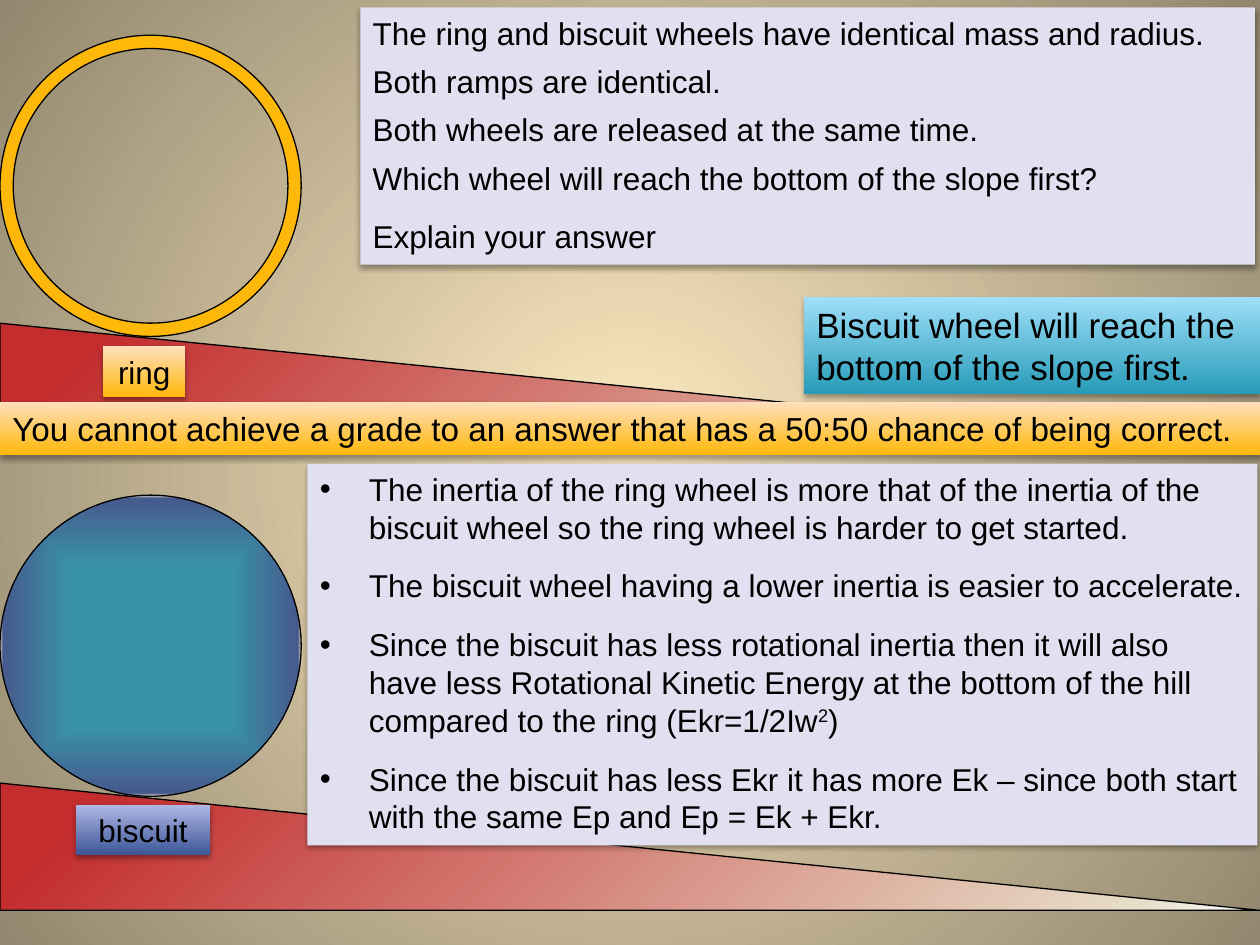
from lxml.etree import SubElement
from pptx import Presentation
from pptx.dml.color import RGBColor
from pptx.enum.shapes import MSO_SHAPE
from pptx.enum.text import MSO_ANCHOR, MSO_AUTO_SIZE, PP_ALIGN
from pptx.oxml.ns import qn
from pptx.util import Inches, Pt

# Grid: 100 columns by 75 rows of square cells
COLUMNS, ROWS = 100, 75
CELL = Inches(0.1)
WHEEL_SIZE = 23.9
RAMP_ROWS = 10.1
RAMP_DROP = 22.85  # from the top of a wheel to the top of its ramp
BULLET_INDENT = Inches(0.39)

BLACK = RGBColor(0x00, 0x00, 0x00)
WHITE = RGBColor(0xFF, 0xFF, 0xFF)
CREAM = RGBColor(0xFF, 0xEC, 0xC2)
OLIVE = RGBColor(0x92, 0x87, 0x6E)
AMBER = RGBColor(0xFE, 0xB8, 0x0A)
RED = RGBColor(0xC3, 0x2D, 0x2E)
SAND = RGBColor(0xE7, 0xDE, 0xC9)
TEAL = RGBColor(0x38, 0x91, 0xA7)
INDIGO = RGBColor(0x47, 0x5A, 0x8D)
LAVENDER = RGBColor(0xE0, 0xE0, 0xF0)

# Gradients as (position in percent, colour) stops
BACKDROP = [(0, CREAM), (100, OLIVE)]
RAMP = [(8, RED), (91, SAND), (100, WHITE)]
BISCUIT = [(54, TEAL), (98, INDIGO), (100, SAND)]
ORANGE_SHEEN = [(0, RGBColor(0xFF, 0xB8, 0x09)), (100, RGBColor(0xFF, 0xDF, 0xBC))]
BLUE_SHEEN = [(0, RGBColor(0x27, 0x9B, 0xB8)), (100, RGBColor(0x9F, 0xDF, 0xF9))]
INDIGO_SHEEN = [(0, RGBColor(0x3C, 0x55, 0x98)), (100, RGBColor(0xAE, 0xB8, 0xE4))]

# Paragraphs as (text, points after)
QUESTION = [
    ("The ring and biscuit wheels have identical mass and radius.", 6),
    ("Both ramps are identical.", 6),
    ("Both wheels are released at the same time.", 6),
    ("Which wheel will reach the bottom of the slope first?", 12),
    ("Explain your answer", 6),
]
# Reasons as lists of runs; the second run of a list is superscript
REASONS = [
    ["The inertia of the ring wheel is more that of the inertia of the "
     "biscuit wheel so the ring wheel is harder to get started."],
    ["The biscuit wheel having a lower inertia is easier to accelerate."],
    ["Since the biscuit has less rotational inertia then it will also have less "
     "Rotational Kinetic Energy at the bottom of the hill compared to the ring "
     "(Ekr=1/2Iw", "2", ")"],
    ["Since the biscuit has less Ekr it has more Ek – since both start with "
     "the same Ep and Ep = Ek + Ekr."],
]


def paint_gradient(fill, element, stops, angle=None, shade="circle"):
    """Linear gradient at a clockwise angle, or one from the centre."""
    fill.gradient()
    gradient = element.xpath(".//a:gradFill")[0]
    for child in list(gradient):
        gradient.remove(child)
    stop_list = SubElement(gradient, qn("a:gsLst"))
    for position, colour in stops:
        stop = SubElement(stop_list, qn("a:gs"), pos=str(position * 1000))
        SubElement(stop, qn("a:srgbClr"), val=str(colour))
    if angle is not None:
        SubElement(gradient, qn("a:lin"), ang=str(angle * 60000), scaled="0")
    else:
        centre = SubElement(gradient, qn("a:path"), path=shade)
        SubElement(centre, qn("a:fillToRect"), l="50000", t="50000", r="50000", b="50000")


def add_figure(slide, kind, area, paint, angle=None, shade="circle"):
    """Preset shape on the grid, filled with one colour or with stops."""
    shape = slide.shapes.add_shape(kind, *(round(length * CELL) for length in area))
    shape.shadow.inherit = False
    if isinstance(paint, RGBColor):
        shape.fill.solid()
        shape.fill.fore_color.rgb = paint
    else:
        paint_gradient(shape.fill, shape.element, paint, angle, shade)
    shape.line.color.rgb = BLACK
    shape.line.width = Pt(0.75)
    return shape


def add_box(slide, area, paint, wrap=True):
    """Borderless text box with a soft shadow below."""
    box = add_figure(slide, MSO_SHAPE.RECTANGLE, area, paint, angle=270)
    box.line.fill.background()
    effects = box.element.spPr.find(qn("a:effectLst"))
    shadow = SubElement(effects, qn("a:outerShdw"), blurRad=str(Pt(3.1)),
                        dist=str(Pt(1.8)), dir="5400000", rotWithShape="0")
    SubElement(SubElement(shadow, qn("a:srgbClr"), val=str(BLACK)),
               qn("a:alpha"), val="35000")
    frame = box.text_frame
    frame.word_wrap = wrap
    frame.auto_size = MSO_AUTO_SIZE.SHAPE_TO_FIT_TEXT
    frame.vertical_anchor = MSO_ANCHOR.TOP
    return frame


def add_span(para, text, size=18, superscript=False):
    span = para.add_run()
    span.text = text
    span.font.name = "Arial"
    span.font.size = Pt(size)
    span.font.color.rgb = BLACK
    if superscript:
        span.font._element.set("baseline", "30000")


def next_para(frame, index, space_after=0, align=PP_ALIGN.LEFT):
    para = frame.add_paragraph() if index else frame.paragraphs[0]
    para.alignment = align
    para.space_after = Pt(space_after)
    return para


def add_bullet(para):
    properties = para._p.get_or_add_pPr()
    properties.set("marL", str(BULLET_INDENT))
    properties.set("indent", str(-BULLET_INDENT))
    SubElement(properties, qn("a:buFont"), typeface="Arial")
    SubElement(properties, qn("a:buChar"), char="•")


def add_label(slide, area, paint, text, size=18, align=PP_ALIGN.LEFT, wrap=True):
    frame = add_box(slide, area, paint, wrap)
    add_span(next_para(frame, 0, align=align), text, size)


def add_lane(slide, top, kind, paint):
    """A wheel standing on its ramp."""
    wheel = add_figure(slide, kind, (0, top, WHEEL_SIZE, WHEEL_SIZE), paint, shade="rect")
    add_figure(slide, MSO_SHAPE.RIGHT_TRIANGLE,
               (0, top + RAMP_DROP, COLUMNS, RAMP_ROWS), RAMP, angle=45)
    return wheel


def main():
    deck = Presentation()
    deck.slide_width, deck.slide_height = COLUMNS * CELL, ROWS * CELL
    slide = deck.slides.add_slide(deck.slide_layouts[6])
    paint_gradient(slide.background.fill, slide.element, BACKDROP)

    # Wheels and ramps
    ring = add_lane(slide, 2.8, MSO_SHAPE.DONUT, AMBER)
    ring.adjustments[0] = 0.044
    add_lane(slide, 39.3, MSO_SHAPE.OVAL, BISCUIT)

    # Question
    frame = add_box(slide, (28.6, 0.6, 71, 20.4), LAVENDER)
    for index, (text, space_after) in enumerate(QUESTION):
        add_span(next_para(frame, index, space_after), text)

    # Reasons
    frame = add_box(slide, (24.4, 36.8, 75.4, 30.3), LAVENDER)
    for index, texts in enumerate(REASONS):
        para = next_para(frame, index, 12)
        add_bullet(para)
        for position, text in enumerate(texts):
            add_span(para, text, superscript=position == 1)

    # Answer, wheel names and banner
    add_label(slide, (63.8, 23.6, 36.2, 7.7), BLUE_SHEEN,
              "Biscuit wheel will reach the bottom of the slope first.", size=20)
    add_label(slide, (8.2, 27.5, 6.5, 4), ORANGE_SHEEN, "ring", align=PP_ALIGN.CENTER)
    add_label(slide, (6, 63.9, 10.7, 4), INDIGO_SHEEN, "biscuit", align=PP_ALIGN.CENTER)
    add_label(slide, (0, 31.9, COLUMNS, 4.2), ORANGE_SHEEN,
              "You cannot achieve a grade to an answer that has a 50:50 chance "
              "of being correct.", size=19, wrap=False)

    deck.save("out.pptx")


if __name__ == "__main__":
    main()
